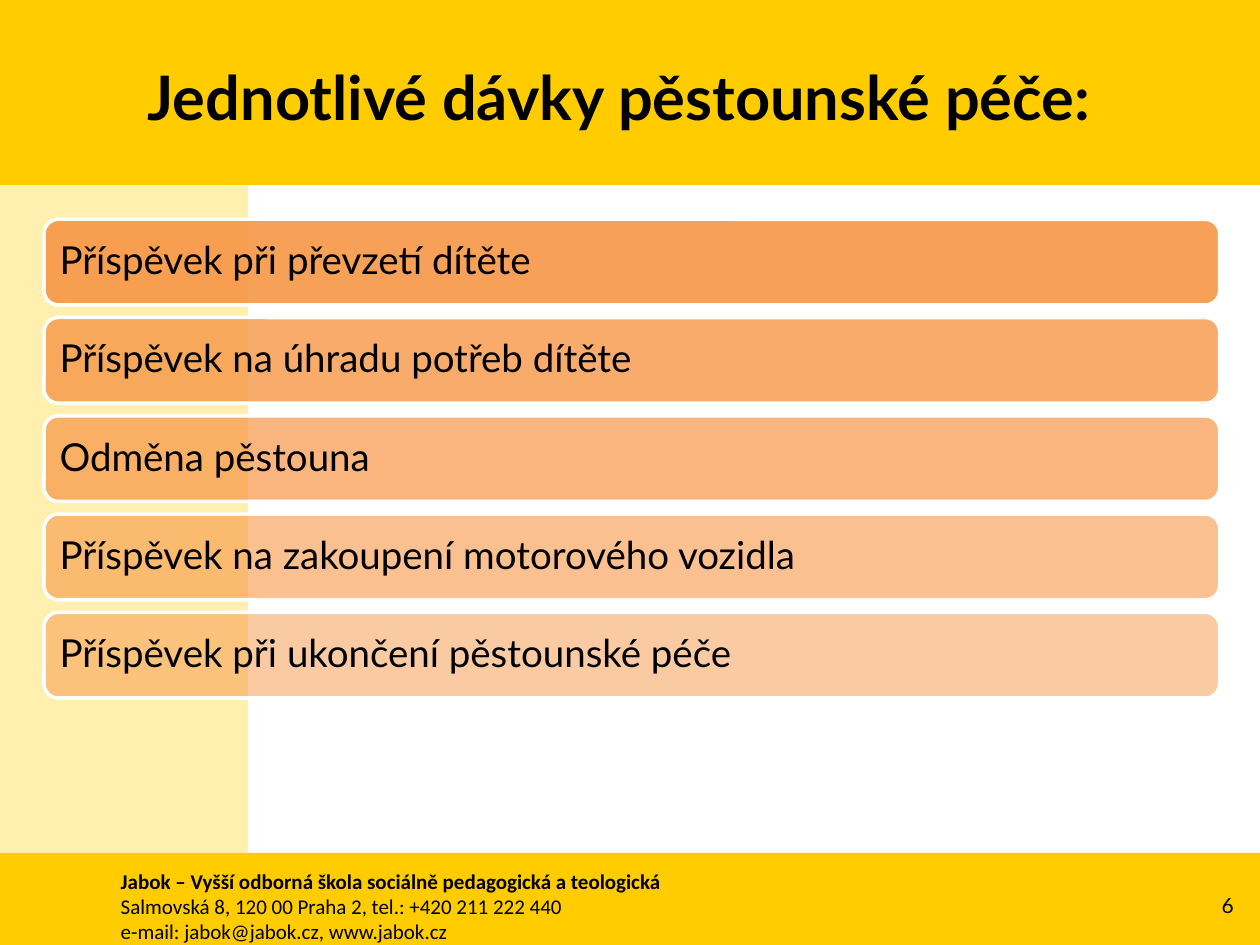
from lxml.etree import SubElement
from pptx import Presentation
from pptx.dml.color import RGBColor
from pptx.enum.shapes import MSO_SHAPE
from pptx.enum.text import MSO_ANCHOR, PP_ALIGN
from pptx.oxml.ns import qn
from pptx.util import Pt

PX = 9144  # 100 px to the inch
COLORS = {
    "band": "FFCC00",
    "sidebar": "FFF0AF",
    "bar": "F79646",
    "outline": "FFFFFF",
    "text": "000000",
}
BENEFITS = [
    "Příspěvek při převzetí dítěte",
    "Příspěvek na úhradu potřeb dítěte",
    "Odměna pěstouna",
    "Příspěvek na zakoupení motorového vozidla",
    "Příspěvek při ukončení pěstounské péče",
]
CONTACT = [
    "Jabok – Vyšší odborná škola sociálně pedagogická a teologická",
    "Salmovská 8, 120 00 Praha 2, tel.: +420 211 222 440",
    "e-mail: jabok@jabok.cz, www.jabok.cz",
]


def add_filled(kind, left, top, width, height, color):
    shape = page.shapes.add_shape(kind, left * PX, top * PX, width * PX, height * PX)
    shape.shadow.inherit = False
    shape.fill.solid()
    shape.fill.fore_color.rgb = RGBColor.from_string(COLORS[color])
    shape.line.fill.background()
    return shape


def style(paragraph, name, size, bold=False):
    paragraph.font.name = name
    paragraph.font.size = Pt(size)
    paragraph.font.bold = bold
    paragraph.font.color.rgb = RGBColor.from_string(COLORS["text"])


deck = Presentation()
deck.slide_width, deck.slide_height = 1000 * PX, 750 * PX
page = deck.slides.add_slide(deck.slide_layouts[5])

# Background bands
add_filled(MSO_SHAPE.RECTANGLE, 0, 0, 1000, 147, "band")
add_filled(MSO_SHAPE.RECTANGLE, 0, 147, 197, 603, "sidebar")
add_filled(MSO_SHAPE.RECTANGLE, 0, 677, 1000, 76, "band")

# Title, brought in front of the top band
title = page.shapes.title
title.left, title.top, title.width, title.height = 35 * PX, 44 * PX, 913 * PX, 64 * PX
title.text_frame.text = "Jednotlivé dávky pěstounské péče:"
title.text_frame.vertical_anchor = MSO_ANCHOR.MIDDLE
title.text_frame.paragraphs[0].alignment = PP_ALIGN.CENTER
style(title.text_frame.paragraphs[0], "Lato", 35, bold=True)
title.element.getparent().append(title.element)

# Benefit bars, each one more transparent than the last
for index, benefit in enumerate(BENEFITS):
    bar = add_filled(MSO_SHAPE.ROUNDED_RECTANGLE, 35, 174 + 78 * index, 933, 68, "bar")
    fill_color = bar.element.spPr.find(qn("a:solidFill"))[0]
    SubElement(fill_color, qn("a:alpha"), val=str((90 - 10 * index) * 1000))
    bar.line.color.rgb = RGBColor.from_string(COLORS["outline"])
    bar.line.width = Pt(2)
    frame = bar.text_frame
    frame.margin_left = frame.margin_right = 9 * PX
    frame.vertical_anchor = MSO_ANCHOR.MIDDLE
    frame.text = benefit
    para = frame.paragraphs[0]
    para.alignment = PP_ALIGN.LEFT
    para.line_spacing = 0.9
    style(para, "Lato", 22)

# Footer
contact_box = page.shapes.add_textbox(86 * PX, 684 * PX, 819 * PX, 71 * PX)
contact_box.text_frame.word_wrap = True
contact_box.text_frame.text = "\n".join(CONTACT)
for index, para in enumerate(contact_box.text_frame.paragraphs):
    style(para, "Calibri", 12, bold=index == 0)

number_box = page.shapes.add_textbox(926 * PX, 698 * PX, 63 * PX, 40 * PX)
number_box.text_frame.word_wrap = True
number_box.text_frame.vertical_anchor = MSO_ANCHOR.MIDDLE
number_box.text_frame.text = "6"
number_box.text_frame.paragraphs[0].alignment = PP_ALIGN.RIGHT
style(number_box.text_frame.paragraphs[0], "Lato", 12)

deck.save("out.pptx")
